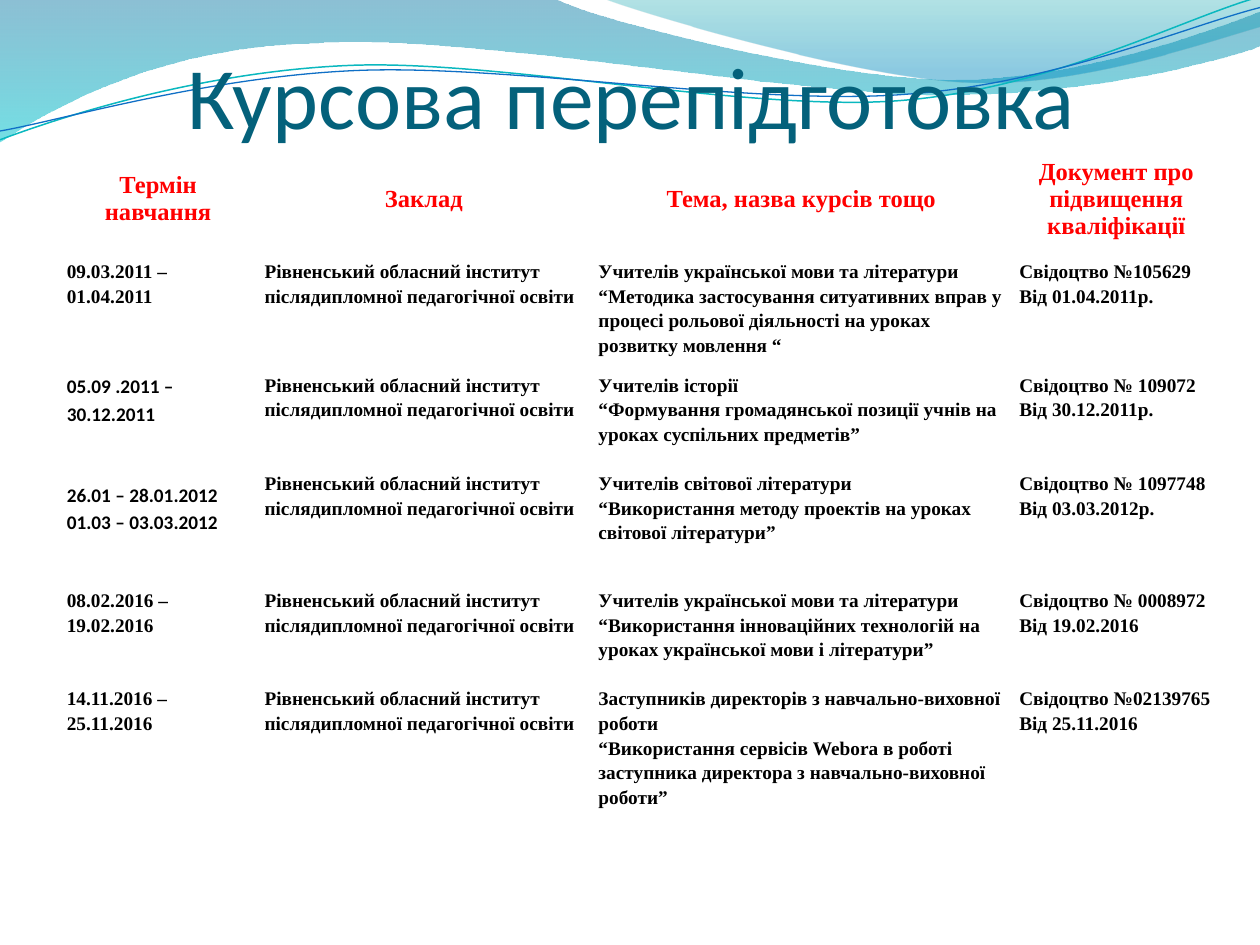
"""Build the slide on teacher retraining courses."""
from lxml import etree
from pptx import Presentation
from pptx.dml.color import RGBColor
from pptx.enum.text import MSO_ANCHOR, MSO_AUTO_SIZE, PP_ALIGN
from pptx.oxml.ns import qn
from pptx.util import Inches, Pt

CENTER, LEFT = PP_ALIGN.CENTER, PP_ALIGN.LEFT
TOP, MIDDLE, BOTTOM = MSO_ANCHOR.TOP, MSO_ANCHOR.MIDDLE, MSO_ANCHOR.BOTTOM
NO_FIT = MSO_AUTO_SIZE.NONE

THEME = {
    "title": ("Calibri", 50, "04617B", False),
    "head": ("Times New Roman", 14, "FF0000", True),
    "body": ("Times New Roman", 11, "000000", True),
    "date": ("Calibri", 11, "000000", True),
    "paper": "FFFFFF",
}

TITLE = "Курсова перепідготовка "
HEADS = ["Термін навчання", "Заклад", "Тема, назва курсів тощо",
         "Документ про підвищення кваліфікації"]
PLACE = ["Рівненський обласний інститут післядипломної педагогічної освіти"]
COURSES = [
    (["09.03.2011 – 01.04.2011"], PLACE,
     ["Учителів української мови та літератури",
      "“Методика застосування ситуативних вправ у процесі рольової "
      "діяльності на уроках розвитку мовлення “"],
     ["Свідоцтво №105629", "Від 01.04.2011р."]),
    (["05.09 .2011 – 30.12.2011"], PLACE,
     ["Учителів історії",
      "“Формування громадянської позиції учнів на уроках суспільних "
      "предметів”"],
     ["Свідоцтво № 109072", "Від 30.12.2011р."]),
    (["26.01 – 28.01.2012", "01.03 – 03.03.2012"], PLACE,
     ["Учителів світової літератури",
      "“Використання методу проектів на уроках світової літератури”"],
     ["Свідоцтво № 1097748", "Від 03.03.2012р."]),
    (["08.02.2016 – 19.02.2016"], PLACE,
     ["Учителів української мови та літератури",
      "“Використання інноваційних технологій на уроках української мови "
      "і літератури”"],
     ["Свідоцтво № 0008972", "Від 19.02.2016"]),
    (["14.11.2016 – 25.11.2016"], PLACE,
     ["Заступників директорів з навчально-виховної роботи",
      "“Використання сервісів Webora в роботі заступника директора "
      "з навчально-виховної роботи”"],
     ["Свідоцтво №02139765", "Від 25.11.2016"]),
]
ROWS = [COURSES[:1], COURSES[1:3], COURSES[3:]]
GAPS = [[0] * 4, [31, 28, 14, 28], [28, 28, 14, 28]]
DATE_ROW = 1
WIDTHS = [1.57, 2.65, 3.34, 1.66]
HEIGHTS = [0.82, 0.89, 1.71, 2.19]

WAVES = [
    ([(0, 0), (4.4, -0.01), (4.76, 0.17, 6.64, 0.63, 7.58, 0.63),
      (8.53, 0.63, 9.58, 0.26, 10, 0.09), (10.01, 0.36),
      (9.83, 0.44, 8.7, 0.76, 7.46, 0.75),
      (6.22, 0.75, 3.82, 0.28, 2.57, 0.34),
      (1.29, 0.36, 0.46, 0.83, -0.01, 1.13), (0, 0)],
     [(0, "0074A1", 45), (1, "00C6CF", 55)]),
    ([(4.79, -0.01), (5.09, 0.11, 6.82, 0.62, 7.69, 0.65),
      (8.56, 0.69, 9.61, 0.32, 10, 0.21), (10, 0), (4.79, -0.01)],
     [(0, "00A1A9", 30), (0.8, "008BBF", 45)]),
]
LINES = [
    ([(0, 1.11), (0.48, 0.93, 1.58, 0.57, 2.77, 0.52),
      (3.95, 0.47, 5.93, 0.89, 7.13, 0.8),
      (8.33, 0.71, 9.38, 0.15, 9.98, -0.02)], "0AB8BF", 0.85),
    ([(0, 1.04), (0.47, 0.96, 1.64, 0.61, 2.83, 0.56),
      (4.03, 0.51, 5.97, 0.84, 7.17, 0.75),
      (8.36, 0.67, 9.41, 0.21, 10, 0.06)], "0F6FC6", 0.75),
]


def outline(slide, moves, close):
    """Add a freeform of straight and Bezier parts without a shadow."""
    spots = [(Inches(move[i]), Inches(move[i + 1]))
             for move in moves for i in range(0, len(move), 2)]
    pen = slide.shapes.build_freeform(*spots[0])
    pen.add_line_segments(spots[1:], close=close)
    shape = pen.convert_to_shape()
    shape.shadow.inherit = False
    nodes = iter(list(shape.element.spPr.iter(qn("a:lnTo"))))
    for move in moves[1:]:
        part = [next(nodes) for _ in range(len(move) // 2)]
        if len(part) == 3:
            bend = etree.Element(qn("a:cubicBezTo"))
            part[0].addprevious(bend)
            for node in part:
                bend.append(node[0])
                node.getparent().remove(node)
    return shape


def add_wave(slide, moves, stops):
    """Add a filled wave with a see-through gradient."""
    wave = outline(slide, moves, True)
    wave.line.fill.background()
    wave.fill.gradient()
    wave.fill.gradient_angle = 270
    for stop, (place, color, _) in zip(wave.fill.gradient_stops, stops):
        stop.position = place
        stop.color.rgb = RGBColor.from_string(color)
    tints = wave.element.spPr.iter(qn("a:srgbClr"))
    for tint, (_, _, alpha) in zip(tints, stops):
        etree.SubElement(tint, qn("a:alpha"), val=str(alpha * 1000))


def add_line(slide, moves, color, width):
    """Add a thin curve."""
    curve = outline(slide, moves, False)
    curve.fill.background()
    curve.line.color.rgb = RGBColor.from_string(color)
    curve.line.width = Pt(width)


def style(para, key, align):
    """Format one paragraph and its runs."""
    name, size, color, bold = THEME[key]
    para.alignment = align
    for run in para.runs:
        run.font.name, run.font.size, run.font.bold = name, Pt(size), bold
        run.font.color.rgb = RGBColor.from_string(color)


def add_title(slide):
    """Fill the title placeholder and bring it to the front."""
    title = slide.shapes.title
    title.left, title.top = Inches(0.55), Inches(0.23)
    title.width, title.height = Inches(9.08), Inches(0.94)
    frame = title.text_frame
    frame.text = TITLE
    frame.auto_size = NO_FIT
    frame.word_wrap = True
    frame.vertical_anchor = BOTTOM
    frame.margin_left = frame.margin_right = frame.margin_bottom = 0
    frame.margin_top = Inches(0.05)
    style(frame.paragraphs[0], "title", CENTER)
    slide.shapes.element.append(title.element)


def fill_cell(cell, groups, gap, key):
    """Write groups of paragraphs, with a gap before each later group."""
    head = key == "head"
    cell.fill.solid()
    cell.fill.fore_color.rgb = RGBColor.from_string(THEME["paper"])
    cell.margin_left = cell.margin_right = Inches(0.06)
    cell.margin_top = cell.margin_bottom = Inches(0.06)
    cell.vertical_anchor = MIDDLE if head else TOP
    frame = cell.text_frame
    frame.text = "\n".join(text for group in groups for text in group)
    for para in frame.paragraphs:
        para.line_spacing = 1.0 if head else 1.15
        style(para, key, CENTER if head else LEFT)
    if len(groups) > 1:
        frame.paragraphs[len(groups[0])].space_before = Pt(gap)


def add_courses(slide):
    """Add the table of courses."""
    table = slide.shapes.add_table(
        len(HEIGHTS), len(WIDTHS), Inches(0.47), Inches(1.17),
        Inches(sum(WIDTHS)), Inches(sum(HEIGHTS))).table
    table.first_row = table.horz_banding = False
    for col, width in zip(table.columns, WIDTHS):
        col.width = Inches(width)
    for row, height in zip(table.rows, HEIGHTS):
        row.height = Inches(height)
    for c, head in enumerate(HEADS):
        fill_cell(table.cell(0, c), [[head]], 0, "head")
        for r, (row, gaps) in enumerate(zip(ROWS, GAPS)):
            key = "date" if (r, c) == (DATE_ROW, 0) else "body"
            fill_cell(table.cell(r + 1, c), [item[c] for item in row],
                      gaps[c], key)


def main():
    """Build and save the deck."""
    deck = Presentation()
    deck.slide_width, deck.slide_height = Inches(10), Inches(7.5)
    slide = deck.slides.add_slide(deck.slide_layouts[5])
    for wave in WAVES:
        add_wave(slide, *wave)
    for line in LINES:
        add_line(slide, *line)
    add_title(slide)
    add_courses(slide)
    deck.save("out.pptx")


if __name__ == "__main__":
    main()
